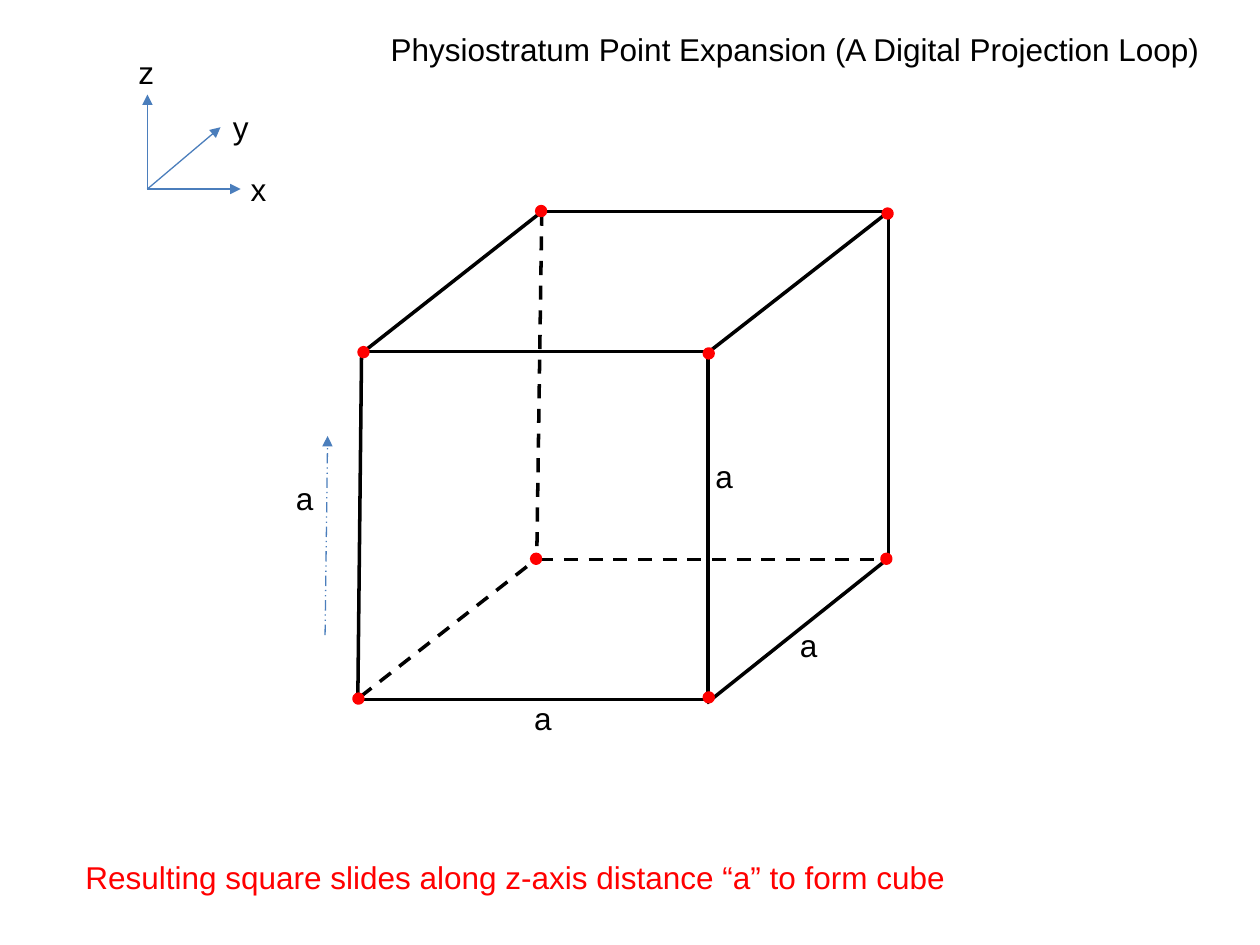
from lxml.etree import SubElement
from pptx import Presentation
from pptx.dml.color import RGBColor
from pptx.enum.dml import MSO_LINE
from pptx.enum.shapes import MSO_CONNECTOR, MSO_SHAPE
from pptx.enum.text import MSO_ANCHOR, MSO_AUTO_SIZE, PP_ALIGN
from pptx.oxml.ns import qn
from pptx.util import Inches, Pt

BLACK = RGBColor(0x00, 0x00, 0x00)
RED = RGBColor(0xFF, 0x00, 0x00)
BLUE = RGBColor(0x4B, 0x7E, 0xBC)
FRAME_FORMAT = {
    "word_wrap": True,
    "auto_size": MSO_AUTO_SIZE.NONE,
    "vertical_anchor": MSO_ANCHOR.TOP,
    "margin_left": Inches(0.1),
    "margin_right": Inches(0.1),
    "margin_top": Inches(0.05),
    "margin_bottom": Inches(0.05),
}
FONT_FORMAT = {"name": "Arial", "size": Pt(18)}
LINE_HEIGHT = 0.4
LABEL_WIDTH = 0.25
DOT_SIZE = 0.07
SOLID_EDGES = [
    ((0.05, 3.95), (2.81, 3.95)),
    ((0.06, 1.19), (2.82, 1.19)),
    ((0.07, 1.19), (0.04, 3.95)),
    ((0.1, 1.18), (1.5, 0.08)),
    ((1.49, 0.08), (4.25, 0.08)),
    ((4.25, 0.08), (4.25, 2.84)),
    ((2.81, 3.98), (4.24, 2.84)),
    ((2.82, 1.19), (2.82, 3.95)),
    ((2.83, 1.19), (4.24, 0.09)),
]
HIDDEN_EDGES = [
    ((1.5, 0.08), (1.46, 2.84)),
    ((0.06, 3.93), (1.48, 2.82)),
    ((1.48, 2.84), (4.24, 2.84)),
]
CORNERS = [
    (1.46, 0.04), (0.05, 1.16), (4.2, 2.8), (0.01, 3.91),
    (2.79, 3.9), (4.21, 0.06), (2.79, 1.17), (1.42, 2.8),
]
SIDE_LABELS = [(1.34, 3.9), (3.45, 3.32), (2.78, 1.98)]


def set_formats(target, formats):
    """Set every attribute in a dict of format values."""
    for name, value in formats.items():
        setattr(target, name, value)


def write_text(box, text, color):
    """Write one left-aligned line into a box."""
    frame = box.text_frame
    set_formats(frame, FRAME_FORMAT)
    para = frame.paragraphs[0]
    para.alignment = PP_ALIGN.LEFT
    span = para.add_run()
    span.text = text
    set_formats(span.font, FONT_FORMAT)
    span.font.color.rgb = color


def add_text(page, left, top, width, text, color=BLACK):
    """Add a one-line text box."""
    box = page.shapes.add_textbox(
        Inches(left), Inches(top), Inches(width), Inches(LINE_HEIGHT))
    write_text(box, text, color)


def add_line(page, origin, start, end, color=BLACK, width=2, dash=None, arrow=False):
    """Draw a straight line between two points measured from an origin."""
    left, top = origin
    line = page.shapes.add_connector(
        MSO_CONNECTOR.STRAIGHT,
        Inches(left + start[0]), Inches(top + start[1]),
        Inches(left + end[0]), Inches(top + end[1]))
    line.line.color.rgb = color
    line.line.width = Pt(width)
    if dash:
        line.line.dash_style = dash
    properties = line._element.spPr
    if arrow:
        SubElement(properties.find(qn("a:ln")), qn("a:tailEnd"), type="triangle")
    SubElement(properties, qn("a:effectLst"))


def add_title(page, left, top, width):
    """Place the slide title in its placeholder."""
    title = page.shapes.title
    set_formats(title, {
        "left": Inches(left), "top": Inches(top),
        "width": Inches(width), "height": Inches(LINE_HEIGHT)})
    write_text(title, "Physiostratum Point Expansion (A Digital Projection Loop)", BLACK)


def add_axes(page, left, top):
    """Draw the labelled x, y and z axes."""
    axes = [
        ("x", (0.91, 1.13), (0.89, 0.93)),
        ("y", (0.75, 0.64), (0.75, 0.44)),
        ("z", (0.17, 0.38), (0, 0)),
    ]
    for name, tip, label in axes:
        add_line(page, (left, top), (0.17, 1.13), tip, BLUE, 0.75, arrow=True)
        add_text(page, left + label[0], top + label[1], LABEL_WIDTH, name)


def add_cube(page, left, top):
    """Draw the cube with its edges, corner dots and side labels."""
    for edges, dash in ((SOLID_EDGES, None), (HIDDEN_EDGES, MSO_LINE.DASH)):
        for start, end in edges:
            add_line(page, (left, top), start, end, dash=dash)
    for x, y in CORNERS:
        dot = page.shapes.add_shape(
            MSO_SHAPE.OVAL, Inches(left + x), Inches(top + y),
            Inches(DOT_SIZE), Inches(DOT_SIZE))
        dot.shadow.inherit = False
        dot.fill.solid()
        dot.fill.fore_color.rgb = RED
        dot.line.color.rgb = RED
        dot.line.width = Pt(2)
    for x, y in SIDE_LABELS:
        add_text(page, left + x, top + y, LABEL_WIDTH, "a")


def add_slide_direction(page, left, top):
    """Draw the arrow showing the distance the square slides."""
    add_line(page, (left, top), (0.33, 1.58), (0.35, 0), BLUE, 0.75,
             MSO_LINE.DASH_DOT_DOT, arrow=True)
    add_text(page, left, top + 0.29, LABEL_WIDTH, "a")


def main():
    """Build and save the deck."""
    deck = Presentation()
    deck.slide_width = Inches(10)
    deck.slide_height = Inches(7.5)
    page = deck.slides.add_slide(deck.slide_layouts[5])
    add_title(page, 3, 0.19, 6.75)
    add_axes(page, 1, 0.37)
    add_cube(page, 2.8, 1.6)
    add_slide_direction(page, 2.25, 3.46)
    add_text(page, 0.58, 6.76, 7.58,
             "Resulting square slides along z-axis distance “a” to form cube", RED)
    deck.save("out.pptx")


if __name__ == "__main__":
    main()
